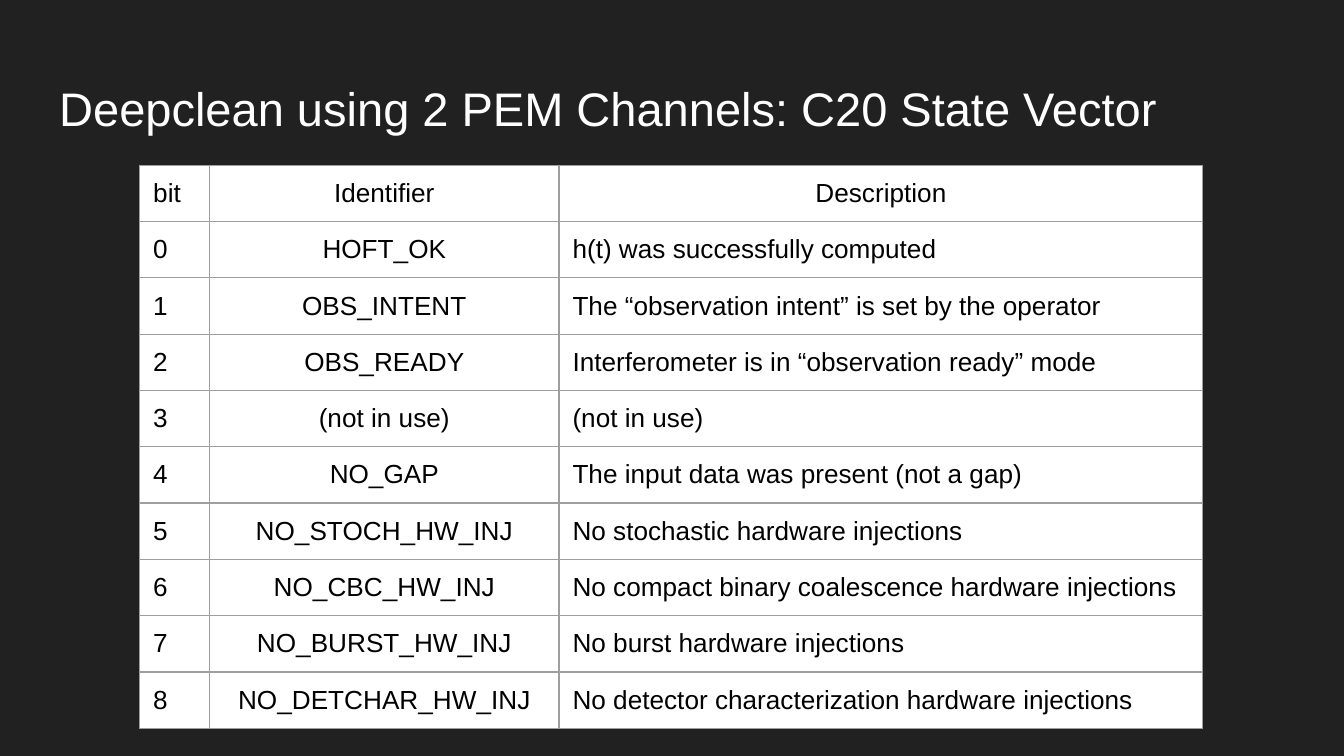
import pptx
import pptx.dml.color
import pptx.enum.text
import pptx.oxml
import pptx.oxml.ns
import pptx.util

Inches = pptx.util.Inches
Pt = pptx.util.Pt
Align = pptx.enum.text.PP_ALIGN
Anchor = pptx.enum.text.MSO_ANCHOR

COLUMN_WIDTHS = [0.52, 2.6, 4.79]
HEADINGS = ["bit", "Identifier", "Description"]
STATE_BITS = [
    ("HOFT_OK", "h(t) was successfully computed"),
    ("OBS_INTENT", "The “observation intent” is set by the operator"),
    ("OBS_READY", "Interferometer is in “observation ready” mode"),
    ("(not in use)", "(not in use)"),
    ("NO_GAP", "The input data was present (not a gap)"),
    ("NO_STOCH_HW_INJ", "No stochastic hardware injections"),
    ("NO_CBC_HW_INJ", "No compact binary coalescence hardware injections"),
    ("NO_BURST_HW_INJ", "No burst hardware injections"),
    ("NO_DETCHAR_HW_INJ", "No detector characterization hardware injections"),
]
MARGINS = {f"margin_{side}": Inches(0.1) for side in ("left", "top", "right", "bottom")}


def color(value):
    return pptx.dml.color.RGBColor.from_string(value)


def set_format(target, values):
    for name, value in values.items():
        setattr(target, name, value)


def write_text(para, text, size, font_color, alignment):
    para.alignment = alignment
    span = para.add_run()
    span.text = text
    set_format(span.font, {"name": "Arial", "size": Pt(size), "bold": False})
    span.font.color.rgb = color(font_color)


def add_borders(cell, line_color, width):
    properties = cell._tc.get_or_add_tcPr()
    for side in "LRTB":
        properties.append(pptx.oxml.parse_xml(
            f'<a:ln{side} {pptx.oxml.ns.nsdecls("a")} w="{Pt(width)}">'
            f'<a:solidFill><a:srgbClr val="{line_color}"/></a:solidFill>'
            f'</a:ln{side}>'))


def place_title(page, box, text):
    title = page.shapes.title
    left, top, width, height = map(Inches, box)
    set_format(title, {"left": left, "top": top, "width": width, "height": height})
    frame = title.text_frame
    set_format(frame, {**MARGINS, "word_wrap": True, "vertical_anchor": Anchor.TOP,
                       "auto_size": pptx.enum.text.MSO_AUTO_SIZE.NONE})
    write_text(frame.paragraphs[0], text, 25.2, "FFFFFF", Align.LEFT)


def place_state_table(page, box):
    rows = [HEADINGS] + [(str(bit), *words) for bit, words in enumerate(STATE_BITS)]
    shape = page.shapes.add_table(len(rows), len(HEADINGS), *map(Inches, box))
    table = shape.table
    set_format(table, {"first_row": False, "horz_banding": False})
    for column, width in zip(table.columns, COLUMN_WIDTHS):
        column.width = Inches(width)
    for row_index, words in enumerate(rows):
        table.rows[row_index].height = Inches(box[3] / len(rows))
        for column_index, text in enumerate(words):
            cell = table.cell(row_index, column_index)
            set_format(cell, {**MARGINS, "vertical_anchor": Anchor.TOP})
            add_borders(cell, "9E9E9E", 0.75)
            cell.fill.solid()
            cell.fill.fore_color.rgb = color("FFFFFF")
            centered = column_index == 1 or (row_index == 0 and column_index == 2)
            write_text(cell.text_frame.paragraphs[0], text, 14, "000000",
                       Align.CENTER if centered else Align.LEFT)


def main():
    deck = pptx.Presentation()
    slide_width = Inches(10)
    set_format(deck, {"slide_width": slide_width, "slide_height": slide_width * 9 // 16})
    page = deck.slides.add_slide(deck.slide_layouts[5])
    page.background.fill.solid()
    page.background.fill.fore_color.rgb = color("212121")
    place_title(page, (0.34, 0.49, 9.32, 0.63),
                "Deepclean using 2 PEM Channels: C20 State Vector")
    place_state_table(page, (1.04, 1.23, sum(COLUMN_WIDTHS), 4.18))
    deck.save("out.pptx")


if __name__ == "__main__":
    main()
